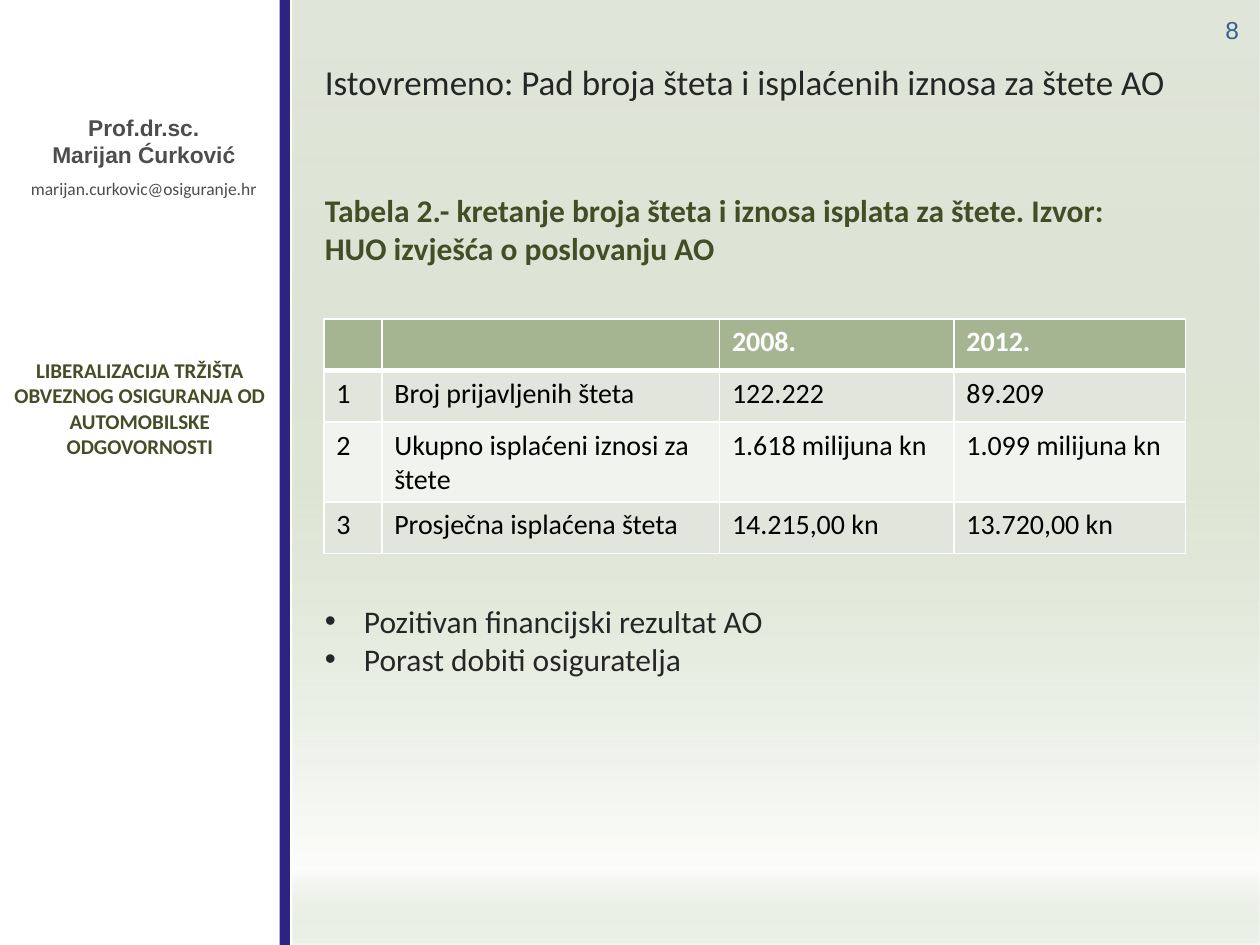
from lxml.etree import SubElement
from pptx import Presentation
from pptx.dml.color import RGBColor
from pptx.enum.shapes import MSO_SHAPE
from pptx.enum.text import PP_ALIGN
from pptx.oxml import parse_xml
from pptx.oxml.ns import nsdecls, qn
from pptx.util import Inches, Pt

OLIVE = "444D26"
DARK = "262626"
GREY = "4D4D4D"
WHITE = "FFFFFF"


def color(value):
    return RGBColor.from_string(value)


class SlideBuilder:
    font = "Calibri"

    def __init__(self, presentation):
        self.slide = presentation.slides.add_slide(presentation.slide_layouts[6])

    def style(self, paragraph, size, text_color, bold=False, font=None):
        paragraph.font.name = font or self.font
        paragraph.font.size = Pt(size)
        paragraph.font.bold = bold
        paragraph.font.color.rgb = color(text_color)

    def rectangle(self, left, top, width, height, fill=None, stops=None):
        """Draw a borderless rectangle, solid or with (position, colour, opacity) stops."""
        shape = self.slide.shapes.add_shape(
            MSO_SHAPE.RECTANGLE, Inches(left), Inches(top), Inches(width), Inches(height))
        shape.shadow.inherit = False
        shape.line.fill.background()
        if fill:
            shape.fill.solid()
            shape.fill.fore_color.rgb = color(fill)
        else:
            stop_xml = "".join(
                f'<a:gs pos="{position * 1000}"><a:srgbClr val="{value}">'
                f'<a:alpha val="{opacity * 1000}"/></a:srgbClr></a:gs>'
                for position, value, opacity in stops)
            gradient = parse_xml(
                f'<a:gradFill {nsdecls("a")} rotWithShape="1"><a:gsLst>{stop_xml}</a:gsLst>'
                '<a:lin ang="5400000" scaled="0"/></a:gradFill>')
            shape.element.spPr.find(qn("a:prstGeom")).addnext(gradient)

    def text(self, left, top, width, height, lines, align=PP_ALIGN.LEFT,
             bullet=False, wrap=True):
        """Add a text box; each line is a text and its style."""
        box = self.slide.shapes.add_textbox(
            Inches(left), Inches(top), Inches(width), Inches(height))
        frame = box.text_frame
        frame.word_wrap = wrap
        for index, (words, style) in enumerate(lines):
            paragraph = frame.add_paragraph() if index else frame.paragraphs[0]
            paragraph.text = words
            paragraph.alignment = align
            if bullet:
                properties = paragraph._p.get_or_add_pPr()
                properties.set("marL", str(Inches(0.31)))
                properties.set("indent", str(-Inches(0.31)))
                SubElement(properties, qn("a:buFont"), typeface="Arial")
                SubElement(properties, qn("a:buChar"), char="•")
            self.style(paragraph, **style)
        return frame.paragraphs

    def borders(self, cell, top, bottom):
        properties = cell._tc.get_or_add_tcPr()
        for side, width in (("L", 1), ("R", 1), ("T", top), ("B", bottom)):
            line = SubElement(properties, qn(f"a:ln{side}"), w=str(Pt(width)))
            fill = SubElement(line, qn("a:solidFill"))
            SubElement(fill, qn("a:srgbClr"), val=WHITE)

    def table(self, left, top, widths, heights, rows):
        table = self.slide.shapes.add_table(
            len(rows), len(widths), Inches(left), Inches(top),
            Inches(sum(widths)), Inches(sum(heights))).table
        for column, width in zip(table.columns, widths):
            column.width = Inches(width)
        for row, height in zip(table.rows, heights):
            row.height = Inches(height)
        for row_index, row in enumerate(rows):
            header = row_index == 0
            fill = "A5B592" if header else ("F0F3EE", "E1E5DC")[row_index % 2]
            for column_index, words in enumerate(row):
                cell = table.cell(row_index, column_index)
                cell.text = words
                self.borders(cell, top=3 if row_index == 1 else 1, bottom=3 if header else 1)
                cell.fill.solid()
                cell.fill.fore_color.rgb = color(fill)
                self.style(cell.text_frame.paragraphs[0], 16,
                           WHITE if header else "000000", bold=header)


def main():
    presentation = Presentation()
    presentation.slide_width = Inches(10)
    presentation.slide_height = Inches(7.5)
    builder = SlideBuilder(presentation)

    # Background panel
    builder.rectangle(2.32, 0, 7.68, 7.5, stops=[
        (6, "DBE1D3", 88), (50, "DDE5D4", 100), (92, "CAD7BB", 4), (100, "EEF2EA", 100)])

    # Sidebar: author, divider and lecture title
    name_style = dict(size=13, text_color=GREY, bold=True, font="Arial")
    author = builder.text(0.13, 0.85, 2.02, 1.01, [
        ("Prof.dr.sc.", name_style),
        ("Marijan Ćurković", name_style),
        ("marijan.curkovic@osiguranje.hr", dict(size=10, text_color=GREY)),
    ], align=PP_ALIGN.CENTER, wrap=False)
    author[2].space_before = Pt(6)
    builder.rectangle(2.22, 0, 0.08, 7.5, fill="2F2382")
    builder.text(-0.04, 2.79, 2.3, 0.91, [
        ("LIBERALIZACIJA TRŽIŠTA OBVEZNOG OSIGURANJA OD AUTOMOBILSKE ODGOVORNOSTI",
         dict(size=12, text_color=OLIVE, bold=True))], align=PP_ALIGN.CENTER)

    # Slide number
    number = builder.text(9.56, 0, 0.44, 0.38, [
        ("8", dict(size=14, text_color="376092", font="Arial"))], align=PP_ALIGN.CENTER)
    number[0].line_spacing = Pt(22)

    # Heading and table caption
    builder.text(2.48, 0.43, 7.32, 0.44, [
        ("Istovremeno: Pad broja šteta i isplaćenih iznosa za štete AO",
         dict(size=20, text_color=DARK))])
    builder.text(2.48, 1.47, 6.85, 0.71, [
        ("Tabela 2.- kretanje broja šteta i iznosa isplata za štete. "
         "Izvor: HUO izvješća o poslovanju AO",
         dict(size=18, text_color=OLIVE, bold=True))])

    # Claims table
    builder.table(2.57, 2.53, [0.46, 2.68, 1.86, 1.84], [0.41, 0.41, 0.63, 0.41], [
        ("", "", "2008.", "2012."),
        ("1", "Broj prijavljenih šteta", "122.222", "89.209"),
        ("2", "Ukupno isplaćeni iznosi za štete", "1.618 milijuna kn", "1.099 milijuna kn"),
        ("3", "Prosječna isplaćena šteta", "14.215,00 kn", "13.720,00 kn"),
    ])

    # Conclusions
    bullet_style = dict(size=18, text_color=DARK)
    builder.text(2.48, 4.73, 6.85, 0.71, [
        ("Pozitivan financijski rezultat AO", bullet_style),
        ("Porast dobiti osiguratelja", bullet_style),
    ], bullet=True)

    presentation.save("out.pptx")


if __name__ == "__main__":
    main()
